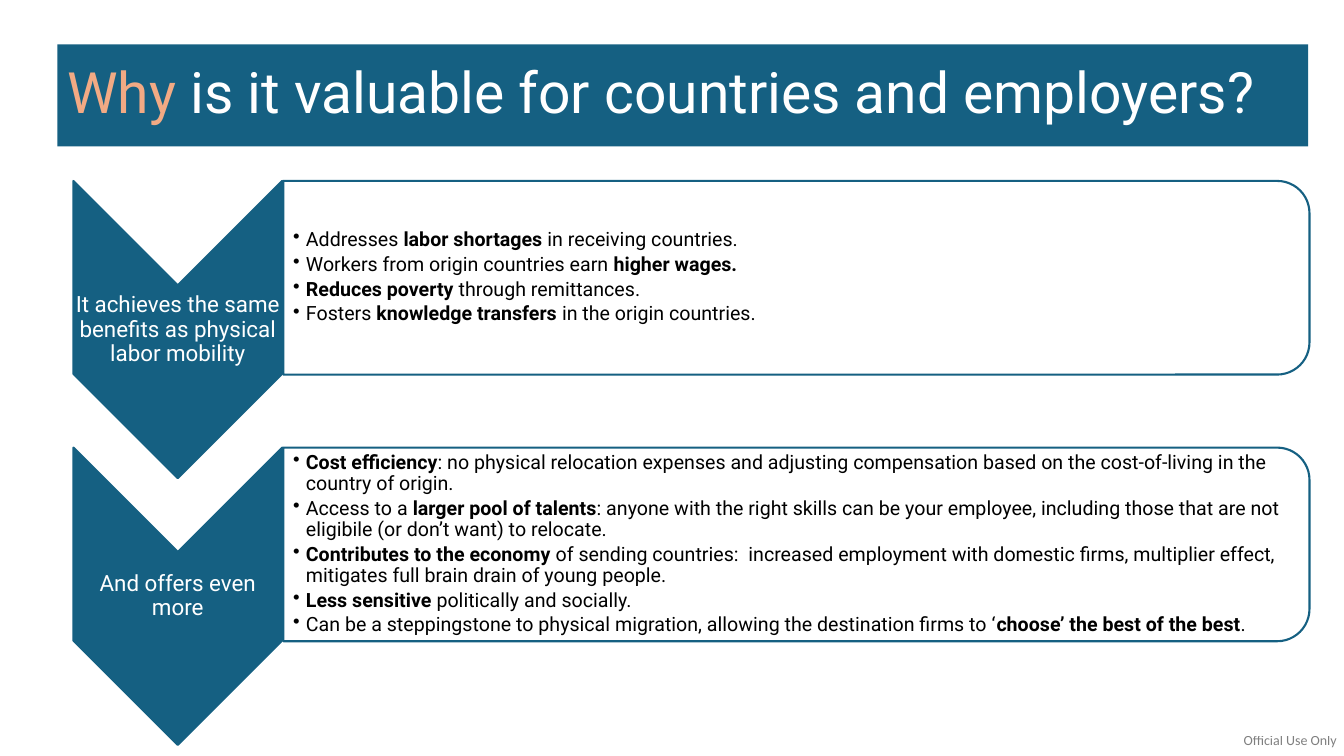
from dataclasses import dataclass

from lxml import etree
from pptx import Presentation
from pptx import util as u
from pptx.dml import color
from pptx.enum import shapes, text
from pptx.oxml import ns


@dataclass(frozen=True)
class Theme:
    """Colours, fonts and type sizes of the slide."""
    teal: str = "156082"
    peach: str = "F2AA84"
    white: str = "FFFFFF"
    black: str = "000000"
    font: str = "Roboto"
    footer_font: str = "Calibri"
    title_size: float = 40.7
    label_size: float = 16
    body_size: float = 14
    footer_size: float = 10


class SlideBuilder:
    """Draws styled elements on the current slide."""

    def __init__(self, page, theme):
        """Keep the slide and its theme."""
        self.page = page
        self.theme = theme

    def set_alpha(self, element, percent):
        """Make the first solid colour inside an element translucent."""
        solid = next(element.iter(ns.qn("a:srgbClr")))
        etree.SubElement(solid, ns.qn("a:alpha")).set("val", str(percent * 1000))

    def shape(self, kind, left, top, width, height, fill, line=None, turned=False):
        """Add a shape by its visible box, optionally turned a quarter clockwise."""
        if turned:
            left, top = left + (width - height) / 2, top + (height - width) / 2
            width, height = height, width
        shape = self.page.shapes.add_shape(
            kind, u.Cm(left), u.Cm(top), u.Cm(width), u.Cm(height))
        shape.shadow.inherit = False
        shape.rotation = 90 if turned else 0
        shape.fill.solid()
        shape.fill.fore_color.rgb = color.RGBColor.from_string(fill)
        if line:
            shape.line.color.rgb = color.RGBColor.from_string(line)
            shape.line.width = u.Pt(1.5)
        else:
            shape.line.fill.background()
        return shape

    def text_box(self, left, top, width, height, margin=0.03, indent=None):
        """Add a wrapping, vertically centred text box and return its frame."""
        box = self.page.shapes.add_textbox(
            u.Cm(left), u.Cm(top), u.Cm(width), u.Cm(height))
        frame = box.text_frame
        frame.word_wrap = True
        frame.vertical_anchor = text.MSO_ANCHOR.MIDDLE
        frame.margin_left = u.Cm(margin if indent is None else indent)
        frame.margin_right = frame.margin_top = frame.margin_bottom = u.Cm(margin)
        return frame

    def format_paragraph(self, para, after=0, align=text.PP_ALIGN.LEFT):
        """Set the tight line spacing, gap and alignment of a paragraph."""
        para.line_spacing = 0.9
        para.space_after = u.Pt(after)
        para.alignment = align

    def span(self, para, words, size, tint, bold=False, font=None):
        """Append one styled run to a paragraph."""
        span = para.add_run()
        span.text = words
        span.font.name = font or self.theme.font
        span.font.size = u.Pt(size)
        span.font.bold = bold
        span.font.color.rgb = color.RGBColor.from_string(tint)
        return span

    def title(self, accent, rest):
        """Add the title band with its accented first word."""
        band = self.shape(shapes.MSO_SHAPE.RECTANGLE, 1.45, 1.12, 31.52, 2.57,
                          self.theme.teal)
        band.text_frame.word_wrap = True
        band.text_frame.vertical_anchor = text.MSO_ANCHOR.MIDDLE
        para = band.text_frame.paragraphs[0]
        self.format_paragraph(para, after=6)
        self.span(para, accent, self.theme.title_size, self.theme.peach)
        self.span(para, rest, self.theme.title_size, self.theme.white)

    def bullets(self, frame, items):
        """Fill a frame with bullets; asterisks enclose bold words."""
        for index, item in enumerate(items):
            para = frame.add_paragraph() if index else frame.paragraphs[0]
            self.format_paragraph(para, after=2.5)
            properties = para._p.get_or_add_pPr()
            properties.set("marL", str(u.Cm(0.32)))
            properties.set("indent", str(-u.Cm(0.32)))
            etree.SubElement(properties, ns.qn("a:buChar")).set("char", "•")
            for position, words in enumerate(item.split("*")):
                if words:
                    self.span(para, words, self.theme.body_size,
                              self.theme.black, bold=position % 2 == 1)

    def benefit_row(self, top, label, items):
        """Add a downward chevron with its label and bulleted panel."""
        theme = self.theme
        self.shape(shapes.MSO_SHAPE.CHEVRON, 1.85, top, 5.26, 7.49,
                   theme.teal, theme.teal, turned=True)
        frame = self.text_box(1.85, top + 2.62, 5.26, 2.26)
        para = frame.paragraphs[0]
        self.format_paragraph(para, align=text.PP_ALIGN.CENTER)
        self.span(para, label, theme.label_size, theme.white)
        panel = self.shape(shapes.MSO_SHAPE.ROUND_2_SAME_RECTANGLE, 7.14, top,
                           25.86, 4.88, theme.white, theme.teal, turned=True)
        self.set_alpha(panel._element.spPr, 90)
        self.bullets(self.text_box(7.11, top + 0.24, 25.63, 4.39, indent=0.28), items)

    def footer(self, words):
        """Add the grey classification note in the corner."""
        frame = self.text_box(31.34, 18.44, 2.44, 0.43, margin=0)
        frame.word_wrap = False
        frame.vertical_anchor = text.MSO_ANCHOR.TOP
        span = self.span(frame.paragraphs[0], words, self.theme.footer_size,
                         self.theme.black, font=self.theme.footer_font)
        self.set_alpha(span._r, 50)


ROWS = [
    ("It achieves the same benefits as physical labor mobility", [
        "Addresses *labor shortages *in receiving countries.",
        "Workers from origin countries earn *higher wages.*",
        "*Reduces poverty *through remittances.",
        "Fosters *knowledge transfers *in the origin countries.",
    ]),
    ("And offers even more", [
        "*Cost efficiency*: no physical relocation expenses and adjusting "
        "compensation based on the cost-of-living in the country of origin.",
        "Access to a *larger pool of talents*: anyone with the right skills can be "
        "your employee, including those that are not eligibile (or don’t want) "
        "to relocate.",
        "*Contributes to the economy *of sending countries:  increased employment "
        "with domestic firms, multiplier effect, mitigates full brain drain of "
        "young people.",
        "*Less sensitive *politically and socially.",
        "Can be a steppingstone to physical migration, allowing the destination "
        "firms to ‘*choose’ the best of the best*.",
    ]),
]


def main():
    """Build and save the slide."""
    deck = Presentation()
    deck.slide_width, deck.slide_height = u.Cm(33.87), u.Cm(19.05)
    page = deck.slides.add_slide(deck.slide_layouts[6])
    builder = SlideBuilder(page, Theme())
    builder.footer("Official Use Only")
    for index, (label, items) in enumerate(ROWS):
        builder.benefit_row(4.56 + index * 6.72, label, items)
    builder.title("Why ", "is it valuable for countries and employers?")
    deck.save("out.pptx")


if __name__ == "__main__":
    main()
